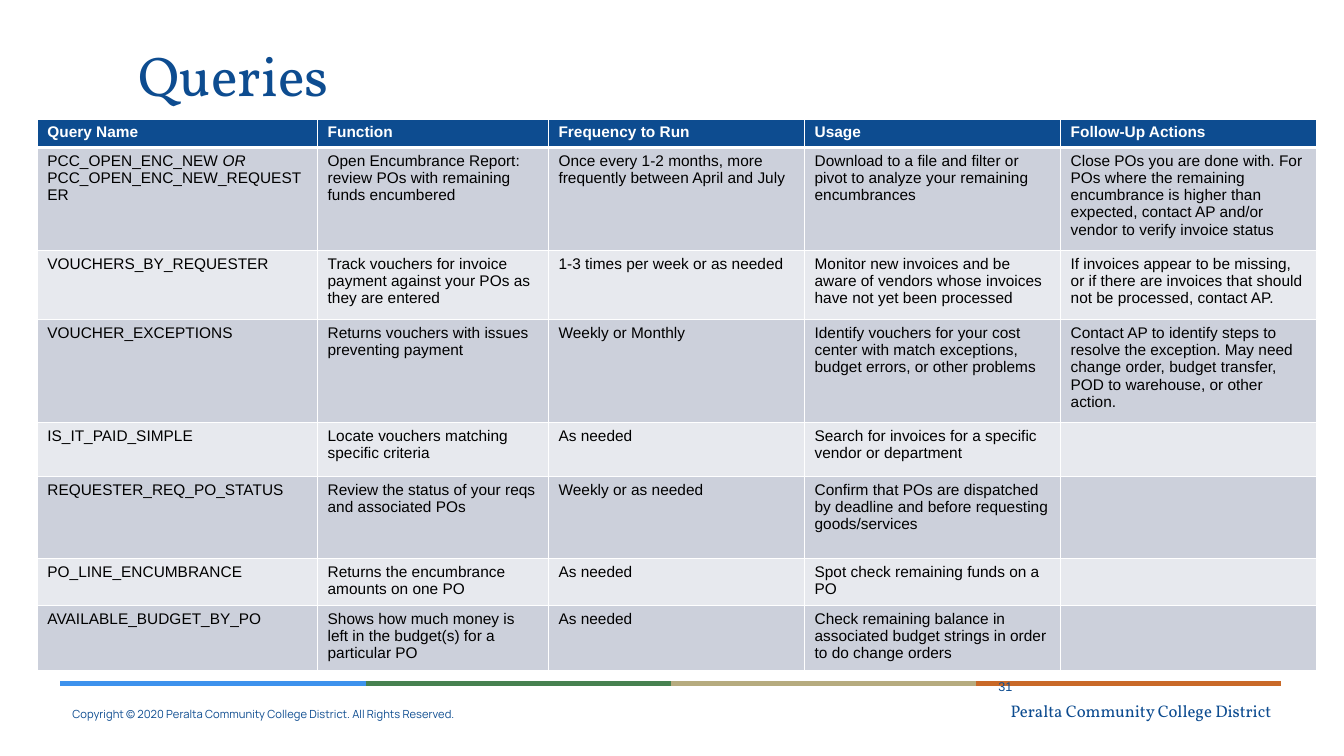
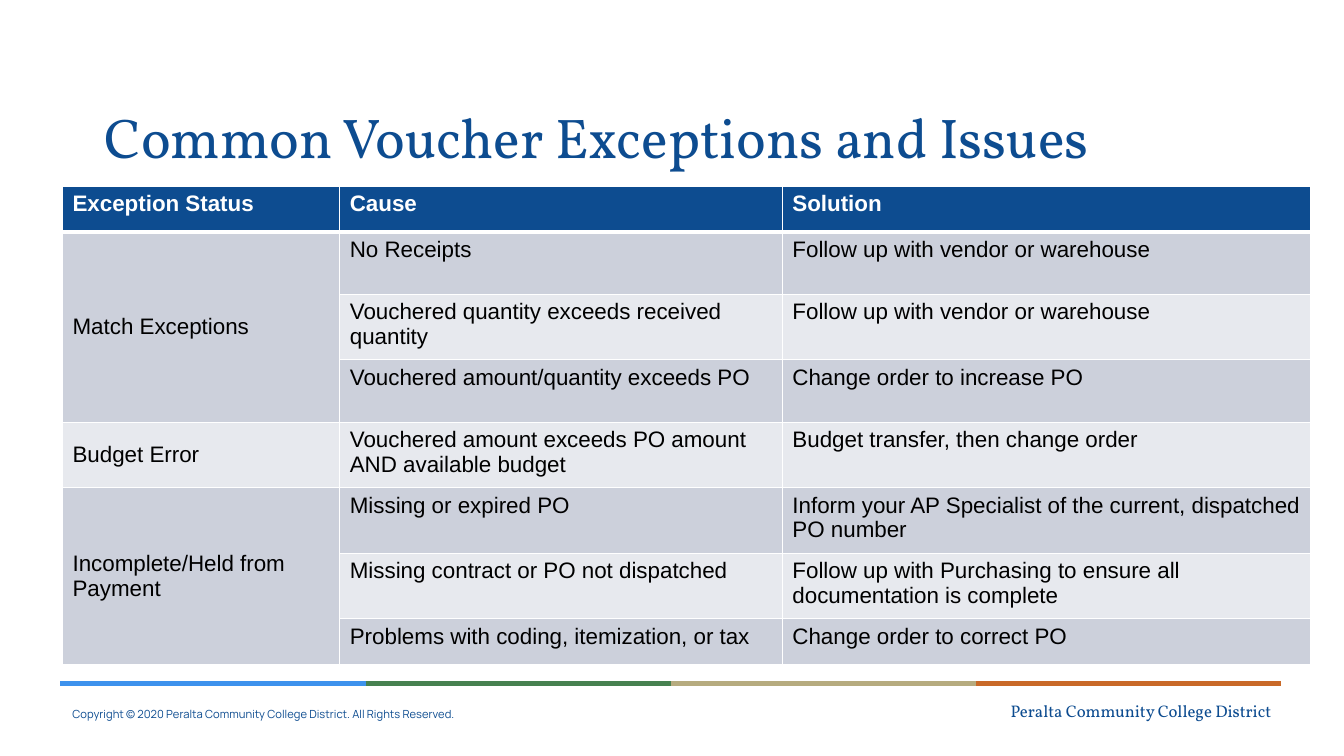
from dataclasses import dataclass
from typing import Optional

from lxml import etree
from pptx import Presentation
from pptx.dml.color import RGBColor
from pptx.enum.text import MSO_ANCHOR as Anchor, PP_ALIGN as Align
from pptx.oxml.ns import qn
from pptx.slide import Slide
from pptx.table import _Cell as Cell
from pptx.text.text import TextFrame
from pptx.util import Inches, Pt

# Shared style
NAVY = RGBColor(0x0D, 0x4C, 0x90)
WHITE = RGBColor(0xFF, 0xFF, 0xFF)
BLACK = RGBColor(0x00, 0x00, 0x00)
DARK_ROW = RGBColor(0xCC, 0xD0, 0xDB)
LIGHT_ROW = RGBColor(0xE7, 0xE9, 0xEE)
BAND_COLORS = (
    RGBColor(0x3D, 0x92, 0xED),
    RGBColor(0x47, 0x81, 0x50),
    RGBColor(0xB6, 0xAB, 0x7F),
    RGBColor(0xC9, 0x69, 0x28),
)
BAND_LEFT, BAND_RIGHT, BAND_TOP = 0.6, 12.71, 6.78
SERIF, SANS, FOOTER_SANS = "Vollkorn", "Arial", "Manrope"


@dataclass(frozen=True)
class TableSpec:
    left: float
    top: float
    size: float
    columns: tuple[float, ...]
    heights: tuple[float, ...]
    rows: tuple[tuple[str, ...], ...]
    merges: tuple[tuple[int, int], ...] = ()  # first and last row, column 0
    centred_column: Optional[int] = None


@dataclass(frozen=True)
class SlideSpec:
    title: str
    title_left: float
    title_top: float
    table: TableSpec
    number: str = ""


# Content; *asterisks* mark italics
QUERIES = SlideSpec(
    "Queries", 1.28, 0.32, number="31",
    table=TableSpec(
        0.37, 1.18, 11,
        columns=(2.78, 2.29, 2.54, 2.54, 2.54),
        heights=(0.28, 1, 0.69, 0.81, 0.54, 0.81, 0.46, 0.63),
        rows=(
            ("Query Name", "Function", "Frequency to Run", "Usage", "Follow-Up Actions"),
            ("PCC_OPEN_ENC_NEW *OR*\nPCC_OPEN_ENC_NEW_REQUESTER",
             "Open Encumbrance Report: review POs with remaining funds encumbered",
             "Once every 1-2 months, more frequently between April and July",
             "Download to a file and filter or pivot to analyze your remaining encumbrances",
             "Close POs you are done with. For POs where the remaining encumbrance is "
             "higher than expected, contact AP and/or vendor to verify invoice status"),
            ("VOUCHERS_BY_REQUESTER",
             "Track vouchers for invoice payment against your POs as they are entered",
             "1-3 times per week or as needed",
             "Monitor new invoices and be aware of vendors whose invoices "
             "have not yet been processed",
             "If invoices appear to be missing, or if there are invoices that "
             "should not be processed, contact AP."),
            ("VOUCHER_EXCEPTIONS",
             "Returns vouchers with issues preventing payment",
             "Weekly or Monthly",
             "Identify vouchers for your cost center with match exceptions, "
             "budget errors, or other problems",
             "Contact AP to identify steps to resolve the exception. May need change "
             "order, budget transfer, POD to warehouse, or other action."),
            ("IS_IT_PAID_SIMPLE", "Locate vouchers matching specific criteria",
             "As needed", "Search for invoices for a specific vendor or department", ""),
            ("REQUESTER_REQ_PO_STATUS", "Review the status of your reqs and associated POs",
             "Weekly or as needed",
             "Confirm that POs are dispatched by deadline and before requesting "
             "goods/services", ""),
            ("PO_LINE_ENCUMBRANCE", "Returns the encumbrance amounts on one PO",
             "As needed", "Spot check remaining funds on a PO", ""),
            ("AVAILABLE_BUDGET_BY_PO",
             "Shows how much money is left in the budget(s) for a particular PO",
             "As needed",
             "Check remaining balance in associated budget strings in order to do "
             "change orders", ""),
        ),
    ),
)

EXCEPTIONS = SlideSpec(
    "Common Voucher Exceptions and Issues", 0.94, 0.93,
    table=TableSpec(
        0.62, 1.85, 16,
        columns=(2.75, 4.39, 5.24),
        heights=(0.45, 0.62, 0.65, 0.62, 0.65, 0.65, 0.65, 0.45),
        merges=((1, 3), (5, 7)),
        centred_column=0,
        rows=(
            ("Exception Status", "Cause", "Solution"),
            ("Match Exceptions", "No Receipts", "Follow up with vendor or warehouse"),
            ("", "Vouchered quantity exceeds received quantity",
             "Follow up with vendor or warehouse"),
            ("", "Vouchered amount/quantity exceeds PO", "Change order to increase PO"),
            ("Budget Error", "Vouchered amount exceeds PO amount AND available budget",
             "Budget transfer, then change order"),
            ("Incomplete/Held from Payment", "Missing or expired PO",
             "Inform your AP Specialist of the current, dispatched PO number"),
            ("", "Missing contract or PO not dispatched",
             "Follow up with Purchasing to ensure all documentation is complete"),
            ("", "Problems with coding, itemization, or tax", "Change order to correct PO"),
        ),
    ),
)


def write_text(frame: TextFrame, text: str, *, size: float, font: str = SANS,
               color: RGBColor = NAVY, bold: bool = False, align: Align = Align.LEFT,
               spacing: float = 1.0) -> None:
    """Fill a frame: one paragraph a line, italics between asterisks."""
    for index, line in enumerate(text.split("\n")):
        paragraph = frame.add_paragraph() if index else frame.paragraphs[0]
        paragraph.alignment = align
        paragraph.line_spacing = spacing
        for part, words in enumerate(line.split("*")):
            if not words:
                continue
            run = paragraph.add_run()
            run.text = words
            run.font.size = Pt(size)
            run.font.name = font
            run.font.color.rgb = color
            run.font.bold = bold
            run.font.italic = part % 2 == 1


def add_label(slide: Slide, text: str, left: float, top: float, width: float,
              height: float, anchor: Anchor = Anchor.TOP, **text_format) -> None:
    box = slide.shapes.add_textbox(Inches(left), Inches(top), Inches(width), Inches(height))
    box.text_frame.word_wrap = True
    box.text_frame.vertical_anchor = anchor
    write_text(box.text_frame, text, **text_format)


def set_borders(cell: Cell, top: float, bottom: float) -> None:
    properties = cell._tc.get_or_add_tcPr()
    for tag, width in (("a:lnL", 1), ("a:lnR", 1), ("a:lnT", top), ("a:lnB", bottom)):
        border = etree.SubElement(properties, qn(tag), w=str(Pt(width)))
        fill = etree.SubElement(border, qn("a:solidFill"))
        etree.SubElement(fill, qn("a:srgbClr"), val=str(WHITE))


def add_footer(slide: Slide) -> None:
    add_label(slide, "Peralta Community College District", 8.32, 6.9, 4.39, 0.3,
              size=12, font=SERIF, align=Align.RIGHT)
    add_label(slide, "Copyright © 2020 Peralta Community College District. "
              "All Rights Reserved.", 0.62, 6.97, 4.91, 0.24, size=8, font=FOOTER_SANS)
    step = (BAND_RIGHT - BAND_LEFT) / len(BAND_COLORS)
    for index, color in enumerate(BAND_COLORS):
        start = BAND_LEFT + index * step
        band = slide.shapes.add_connector(1, Inches(start), Inches(BAND_TOP),
                                          Inches(start + step), Inches(BAND_TOP))
        band.line.color.rgb = color
        band.line.width = Pt(3)
        etree.SubElement(band._element.spPr, qn("a:effectLst"))


def add_grid(slide: Slide, spec: TableSpec) -> None:
    grid = slide.shapes.add_table(
        len(spec.rows), len(spec.columns), Inches(spec.left), Inches(spec.top),
        Inches(sum(spec.columns)), Inches(sum(spec.heights))).table
    grid.horz_banding = False
    for column, width in zip(grid.columns, spec.columns):
        column.width = Inches(width)

    for row_index, texts in enumerate(spec.rows):
        grid.rows[row_index].height = Inches(spec.heights[row_index])
        header = row_index == 0
        row_fill = NAVY if header else DARK_ROW if row_index % 2 else LIGHT_ROW
        for column_index, text in enumerate(texts):
            cell = grid.cell(row_index, column_index)
            set_borders(cell, top=3 if row_index == 1 else 1, bottom=3 if header else 1)
            cell.fill.solid()
            cell.fill.fore_color.rgb = row_fill
            if column_index == spec.centred_column and not header:
                cell.vertical_anchor = Anchor.MIDDLE
            write_text(cell.text_frame, text, size=spec.size, bold=header,
                       color=WHITE if header else BLACK)

    for first, last in spec.merges:
        grid.cell(first, 0).merge(grid.cell(last, 0))


def add_content_slide(deck, spec: SlideSpec) -> None:
    slide = deck.slides.add_slide(deck.slide_layouts[6])
    add_footer(slide)
    add_label(slide, spec.title, spec.title_left, spec.title_top, 11.77, 0.92,
              anchor=Anchor.MIDDLE, size=40, font=SERIF, spacing=0.9)
    add_grid(slide, spec.table)
    if spec.number:
        add_label(slide, spec.number, 9.39, 6.61, 0.75, 0.4, anchor=Anchor.MIDDLE,
                  size=9, align=Align.RIGHT)


def main() -> None:
    deck = Presentation()
    deck.slide_width, deck.slide_height = Inches(13.33), Inches(7.5)
    for spec in (QUERIES, EXCEPTIONS):
        add_content_slide(deck, spec)
    deck.save("out.pptx")


if __name__ == "__main__":
    main()
